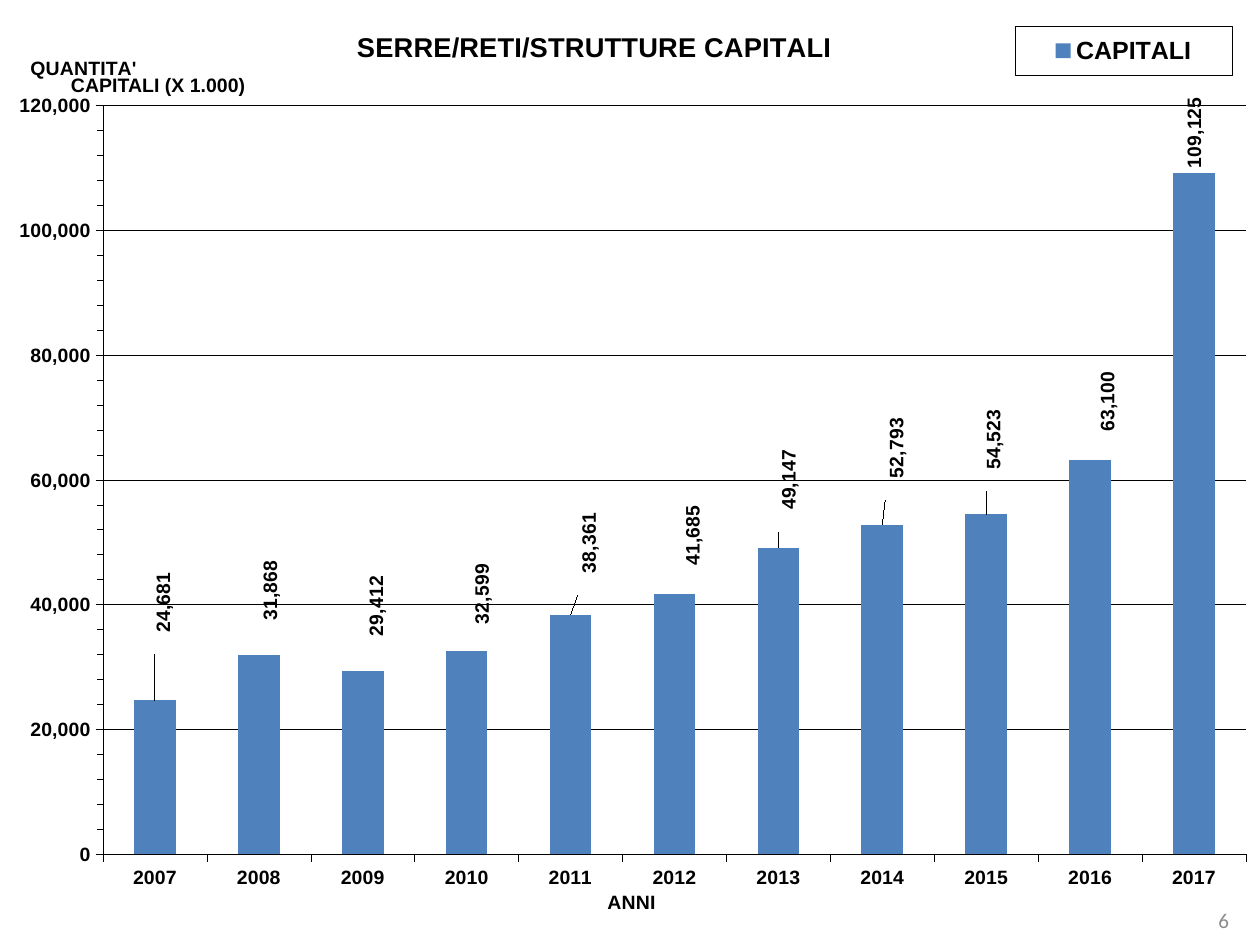
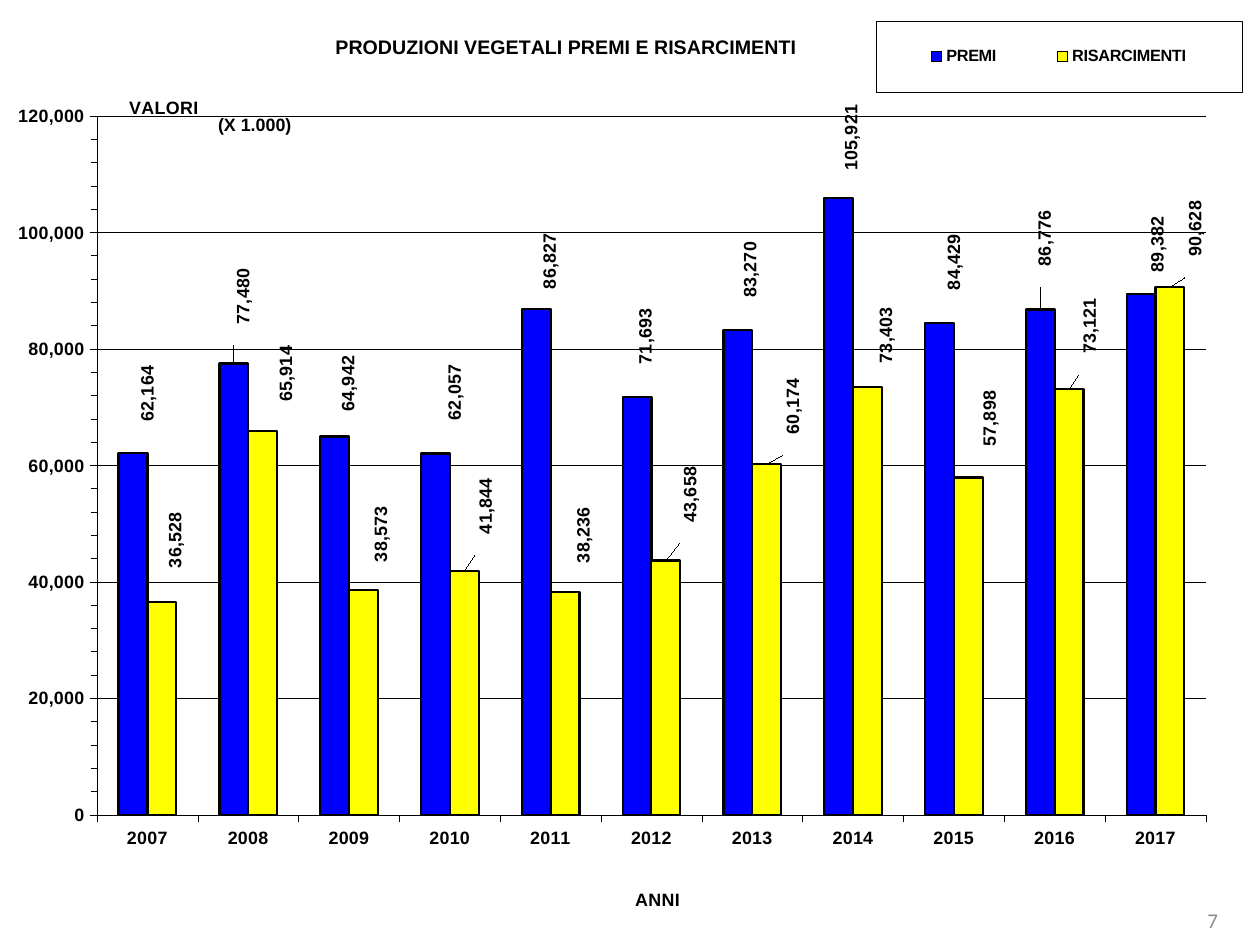
"""Build two slides of yearly column charts: capital values, then premiums and claims."""
from lxml import etree
from pptx import Presentation
from pptx.chart.data import CategoryChartData
from pptx.dml.color import RGBColor
from pptx.enum.chart import XL_CHART_TYPE, XL_LABEL_POSITION, XL_LEGEND_POSITION
from pptx.enum.chart import XL_TICK_LABEL_POSITION, XL_TICK_MARK
from pptx.enum.text import MSO_ANCHOR, PP_ALIGN
from pptx.oxml import parse_xml
from pptx.oxml.ns import nsdecls, qn
from pptx.util import Pt

PX = 914400 / 126
COLORS = {"ink": "000000", "number": "8C8C8C", "capital": "4F81BD",
          "premium": "0000FF", "claim": "FFFF00"}
YEARS = [str(year) for year in range(2007, 2018)]

SLIDES = [
    {
        "number": "6", "number_left": 948, "frame": (10, 16, 1240, 903),
        "plot": (103, 106, 1143, 754), "legend": (1015, 26, 217, 50),
        "title": ("SERRE/RETI/STRUTTURE CAPITALI", 352, 25),
        "years_title": ("ANNI", 604, 891),
        "value_title": ("QUANTITA'", 27, 52),
        "unit": ("CAPITALI (X 1.000)", 71, 74),
        "title_size": 15.6, "text_size": 11.1, "legend_size": 14.3, "axis_line": 0.35,
        "series": [
            {"name": "CAPITALI", "color": "capital", "outline": None,
             "values": [24681, 31868, 29412, 32599, 38361, 41685,
                        49147, 52793, 54523, 63100, 109125],
             "shifts": [(8, -63), (11, -30), (13, -30), (15, -22), (18, -37), (18, -24),
                        (10, -33), (14, -42), (7, -40), (17, -24), (0, 0)]},
        ],
    },
    {
        "number": "7", "number_left": 937, "frame": (15, 16, 1230, 903),
        "plot": (97, 116, 1109, 699), "legend": (876, 21, 366, 71),
        "title": ("PRODUZIONI VEGETALI PREMI E RISARCIMENTI", 332, 30),
        "years_title": ("ANNI", 632, 884),
        "value_title": ("VALORI", 126, 92),
        "unit": ("(X 1.000)", 218, 113),
        "title_size": 11.2, "text_size": 10.2, "legend_size": 9.3, "axis_line": 0.32,
        "series": [
            {"name": "PREMI", "color": "premium", "outline": 1.27,
             "values": [62164, 77480, 64942, 62057, 86827, 71693,
                        83270, 105921, 84429, 86776, 89382],
             "shifts": [(14, -26), (9, -34), (13, -20), (19, -28), (13, -15), (8, -28),
                        (12, -27), (12, -22), (14, -28), (4, -38), (16, -17)]},
            {"name": "RISARCIMENTI", "color": "claim", "outline": 1.27,
             "values": [36528, 65914, 38573, 41844, 38236, 43658,
                        60174, 73403, 57898, 73121, 90628],
             "shifts": [(13, -29), (23, -24), (17, -23), (21, -32), (18, -24), (24, -33),
                        (26, -25), (18, -19), (21, -26), (20, -30), (25, -25)]},
        ],
    },
]


def style_font(font, size, color="ink", name="Arial", bold=True):
    """Give a font its size, colour, face and weight."""
    for key, value in {"size": Pt(size), "name": name, "bold": bold}.items():
        setattr(font, key, value)
    font.color.rgb = RGBColor.from_string(COLORS[color])


def place(element, index, numbers, mode="", inner=False):
    """Put a manual layout, in fractions of the chart, among an element's children."""
    for old in element.findall(qn("c:layout")):
        element.remove(old)
    layout = parse_xml(f"<c:layout {nsdecls('c')}><c:manualLayout/></c:layout>")
    settings = [("layoutTarget", "inner")] if inner else []
    if mode:
        settings += [("xMode", mode), ("yMode", mode)]
    settings += [(key, f"{number:.4f}") for key, number in zip("xywh", numbers)]
    for tag, value in settings:
        etree.SubElement(layout[0], qn(f"c:{tag}")).set("val", value)
    element.insert(index, layout)


deck = Presentation()
deck.slide_width, deck.slide_height = round(1260 * PX), round(945 * PX)

for content in SLIDES:
    page = deck.slides.add_slide(deck.slide_layouts[6])
    left, top, width, height = content["frame"]
    size = content["text_size"]

    data = CategoryChartData(number_format="#,##0")
    data.categories = YEARS
    for entry in content["series"]:
        data.add_series(entry["name"], entry["values"])
    chart = page.shapes.add_chart(XL_CHART_TYPE.COLUMN_CLUSTERED,
                                  *[round(side * PX) for side in content["frame"]], data).chart
    style_font(chart.font, size)
    plot = chart.plots[0]
    for key, value in {"gap_width": 150, "overlap": 0, "vary_by_categories": False}.items():
        setattr(plot, key, value)

    years, values = chart.category_axis, chart.value_axis
    years.tick_label_position = XL_TICK_LABEL_POSITION.LOW
    years.major_tick_mark = XL_TICK_MARK.OUTSIDE
    scale = {"minimum_scale": 0, "maximum_scale": 120000, "major_unit": 20000,
             "minor_unit": 4000, "has_major_gridlines": True,
             "major_tick_mark": XL_TICK_MARK.OUTSIDE, "minor_tick_mark": XL_TICK_MARK.OUTSIDE}
    for key, value in scale.items():
        setattr(values, key, value)
    values.tick_labels.number_format = "#,##0"
    values.tick_labels.number_format_is_linked = False
    for axis in (years, values):
        style_font(axis.tick_labels.font, size)
    for ruled in (years, values, values.major_gridlines):
        ruled.format.line.width = Pt(content["axis_line"])
        ruled.format.line.color.rgb = RGBColor.from_string(COLORS["ink"])

    chart.has_title = True
    titles = [(chart.chart_title, "title", content["title_size"]),
              (years.axis_title, "years_title", size),
              (values.axis_title, "value_title", size)]
    for title, key, title_size in titles:
        text, x, y = content[key]
        title.text_frame.text = text
        style_font(title.text_frame.paragraphs[0].runs[0].font, title_size)
        title._element.xpath(".//a:bodyPr")[0].set("rot", "0")
        place(title._element, 1, ((x - left) / width, (y - top) / height), "edge")

    chart.has_legend = True
    legend = chart.legend
    legend.position = XL_LEGEND_POSITION.RIGHT
    legend.include_in_layout = False
    style_font(legend.font, content["legend_size"])
    legend._element.find(qn("c:txPr")).addprevious(parse_xml(
        f'<c:spPr {nsdecls("c", "a")}><a:ln w="4445"><a:solidFill>'
        f'<a:srgbClr val="{COLORS["ink"]}"/></a:solidFill></a:ln></c:spPr>'))
    plot_area = plot._element.getparent()
    for element, index, key in ((legend._element, 1, "legend"), (plot_area, 0, "plot")):
        x, y, w, h = content[key]
        place(element, index, ((x - left) / width, (y - top) / height, w / width, h / height),
              "edge", inner=key == "plot")

    for series, entry in zip(plot.series, content["series"]):
        series.format.fill.solid()
        series.format.fill.fore_color.rgb = RGBColor.from_string(COLORS[entry["color"]])
        if entry["outline"]:
            series.format.line.width = Pt(entry["outline"])
            series.format.line.color.rgb = RGBColor.from_string(COLORS["ink"])
        labels = series.data_labels
        labels.show_value = True
        labels.number_format = "#,##0"
        labels.number_format_is_linked = False
        point_labels = [series.points[index].data_label for index in range(len(YEARS))]
        for label in [labels, *point_labels]:
            style_font(label.font, size)
            label.position = XL_LABEL_POSITION.OUTSIDE_END
        for body in series._element.xpath("c:dLbls//a:bodyPr"):
            body.set("rot", "-5400000")
            body.set("vert", "horz")
        for element, (dx, dy) in zip(series._element.xpath("c:dLbls/c:dLbl"), entry["shifts"]):
            place(element, 1, (dx / width, dy / height))

    unit, unit_left, unit_top = content["unit"]
    notes = [(unit, (unit_left, unit_top, 180, 22), 0, PP_ALIGN.LEFT,
              {"size": size}),
             (content["number"], (content["number_left"], 895, 294, 50), 13, PP_ALIGN.RIGHT,
              {"size": 12, "color": "number", "name": "Calibri", "bold": False})]
    for text, area, inset, alignment, look in notes:
        box = page.shapes.add_textbox(*[round(side * PX) for side in area])
        frame_format = {"word_wrap": True, "vertical_anchor": MSO_ANCHOR.MIDDLE,
                        "margin_left": round(inset * PX), "margin_right": round(inset * PX),
                        "margin_top": 0, "margin_bottom": 0}
        for key, value in frame_format.items():
            setattr(box.text_frame, key, value)
        para = box.text_frame.paragraphs[0]
        para.alignment = alignment
        span = para.add_run()
        span.text = text
        style_font(span.font, **look)

deck.save("out.pptx")
